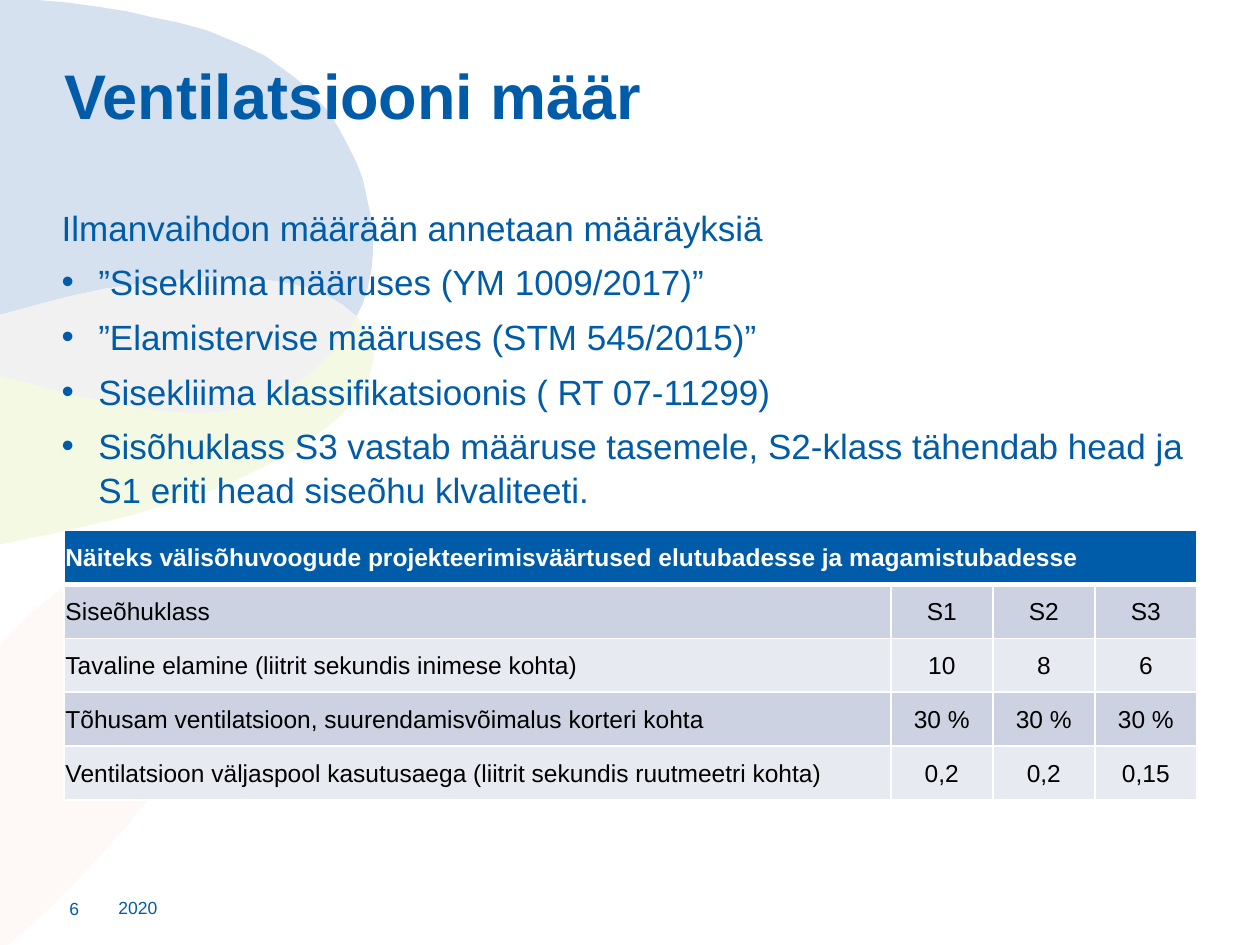
from lxml import etree
from pptx import Presentation
from pptx.dml.color import RGBColor
from pptx.enum import text
from pptx.oxml.ns import qn
from pptx.util import Inches, Pt

BLUE, WHITE, BLACK = "005CA8", "FFFFFF", "000000"
BANDS = ["CCD2E1", "E7EAF1"]

# Edges of the overlapping petals; the first two are shared by neighbours.
LENS_TOP = [
    (0, 2.5), (0.29, 2.42), (0.56, 2.35), (0.84, 2.29), (1.13, 2.25), (1.41, 2.22),
    (1.6, 2.2), (1.91, 2.2), (2.11, 2.22), (2.3, 2.25), (2.46, 2.29), (2.6, 2.35),
    (2.72, 2.42), (2.83, 2.51)]
LENS_BOTTOM = [
    (2.83, 2.51), (2.78, 2.6), (2.7, 2.72), (2.61, 2.82), (2.51, 2.92), (2.4, 3.01),
    (2.28, 3.09), (2.15, 3.15), (2.02, 3.21), (1.88, 3.25), (1.74, 3.27), (1.56, 3.28),
    (1.38, 3.27), (1.16, 3.25), (0.91, 3.2), (0.64, 3.15), (0.33, 3.07), (0, 2.98)]
BLUE_RIM = [
    (2.88, 2.41), (2.92, 2.28), (2.95, 2.13), (2.96, 2.01), (2.96, 1.83), (2.94, 1.7),
    (2.91, 1.56), (2.88, 1.42), (2.83, 1.29), (2.77, 1.17), (2.69, 1.02), (2.61, 0.89),
    (2.53, 0.8), (2.43, 0.69), (2.32, 0.6), (2.21, 0.52), (2.1, 0.44), (1.95, 0.37),
    (1.81, 0.31), (1.64, 0.24), (1.42, 0.18), (1.22, 0.14), (1.01, 0.09), (0.75, 0.05),
    (0.53, 0.02), (0.3, 0), (0, 0)]
GREEN_RIM = [
    (0, 4.32), (0.4, 4.24), (0.75, 4.16), (1.04, 4.09), (1.28, 4.02), (1.55, 3.94),
    (1.84, 3.83), (2.02, 3.74), (2.19, 3.66), (2.35, 3.57), (2.49, 3.47), (2.61, 3.38),
    (2.72, 3.28), (2.81, 3.18), (2.88, 3.08), (2.93, 2.98), (2.96, 2.88), (2.97, 2.81),
    (2.95, 2.71), (2.91, 2.62), (2.83, 2.51)]
PINK_PETAL = [
    (1.39, 4.35), (1.23, 4.36), (1.06, 4.4), (0.89, 4.45), (0.72, 4.54), (0.54, 4.64),
    (0.36, 4.77), (0.18, 4.93), (0, 5.12), (0, 7.5), (0.06, 7.5), (0.23, 7.36),
    (0.39, 7.21), (0.58, 7.02), (0.79, 6.8), (1, 6.56), (1.2, 6.32), (1.39, 6.09),
    (1.56, 5.89), (1.69, 5.71), (1.81, 5.53), (1.92, 5.35), (2, 5.16), (2.05, 5.03),
    (2.07, 4.9), (2.07, 4.79), (2.04, 4.7), (1.99, 4.59), (1.91, 4.51), (1.8, 4.44),
    (1.66, 4.39), (1.52, 4.36)]
PETALS = [
    ("FEF9F7", PINK_PETAL),
    ("F3F9E3", LENS_BOTTOM + GREEN_RIM),
    ("D6E1F0", LENS_TOP + BLUE_RIM),
    ("F1F1F1", LENS_TOP + LENS_BOTTOM),
]

INTRO = "Ilmanvaihdon määrään annetaan määräyksiä"
RULES = [
    "”Sisekliima määruses (YM 1009/2017)”",
    "”Elamistervise määruses (STM 545/2015)”",
    "Sisekliima klassifikatsioonis ( RT 07-11299)",
    "Sisõhuklass S3 vastab määruse tasemele, S2-klass tähendab head ja "
    "S1 eriti head siseõhu klvaliteeti.",
]
HEADING = "Näiteks välisõhuvoogude projekteerimisväärtused elutubadesse ja magamistubadesse"
ROWS = [
    ["Siseõhuklass", "S1", "S2", "S3"],
    ["Tavaline elamine (liitrit sekundis inimese kohta)", "10", "8", "6"],
    ["Tõhusam ventilatsioon, suurendamisvõimalus korteri kohta", "30 %", "30 %", "30 %"],
    ["Ventilatsioon väljaspool kasutusaega (liitrit sekundis ruutmeetri kohta)",
     "0,2", "0,2", "0,15"],
]


def rgb(color):
    return RGBColor.from_string(color)


def add_run(p, words, size, color=BLUE, bold=False):
    r = p.add_run()
    r.text = words
    r.font.name, r.font.size, r.font.bold = "Arial", Pt(size), bold
    r.font.color.rgb = rgb(color)


def add_petal(slide, color, points):
    builder = slide.shapes.build_freeform(*map(Inches, points[0]), scale=1.0)
    builder.add_line_segments([(Inches(x), Inches(y)) for x, y in points[1:]])
    sp = builder.convert_to_shape()
    sp.shadow.inherit = False
    sp.fill.solid()
    sp.fill.fore_color.rgb = rgb(color)
    sp.line.fill.background()


def add_frame(slide, box, anchor=text.MSO_ANCHOR.TOP):
    """Add a wrapping text box without insets and return its text frame."""
    tf = slide.shapes.add_textbox(*map(Inches, box)).text_frame
    tf.word_wrap = True
    tf.vertical_anchor = anchor
    tf.margin_left = tf.margin_top = tf.margin_right = tf.margin_bottom = 0
    return tf


def add_label(slide, box, words, size, **style):
    tf = add_frame(slide, box, style.pop("anchor", text.MSO_ANCHOR.MIDDLE))
    add_run(tf.paragraphs[0], words, size, **style)
    return tf.paragraphs[0]


def add_rules(slide):
    tf = add_frame(slide, (0.49, 1.62, 9, 2.59))
    p = tf.paragraphs[0]
    p.line_spacing = 1.05
    add_run(p, INTRO, 20)
    for rule in RULES:
        p = tf.add_paragraph()
        p.line_spacing, p.space_before = 1.05, Pt(6)
        pPr = p._p.get_or_add_pPr()
        pPr.set("marL", str(Inches(0.29)))
        pPr.set("indent", str(-Inches(0.29)))
        etree.SubElement(pPr, qn("a:buFont"), typeface="Arial")
        etree.SubElement(pPr, qn("a:buChar"), char="•")
        add_run(p, rule, 20)


def set_borders(cell, bottom=1):
    """Draw white cell borders; they must precede the fill in the XML."""
    tcPr = cell._tc.get_or_add_tcPr()
    for side, width in (("L", 1), ("R", 1), ("T", 1), ("B", bottom)):
        ln = etree.SubElement(tcPr, qn(f"a:ln{side}"), w=str(Pt(width)))
        fill = etree.SubElement(ln, qn("a:solidFill"))
        etree.SubElement(fill, qn("a:srgbClr"), val=WHITE)


def fill_cell(cell, words, fill, color=BLACK, bold=False, centred=False, bottom=1):
    set_borders(cell, bottom)
    cell.fill.solid()
    cell.fill.fore_color.rgb = rgb(fill)
    cell.vertical_anchor = text.MSO_ANCHOR.MIDDLE
    cell.margin_left = cell.margin_top = cell.margin_right = Inches(0.01)
    cell.margin_bottom = 0
    p = cell.text_frame.paragraphs[0]
    if centred:
        p.alignment = text.PP_ALIGN.CENTER
    if words:
        add_run(p, words, 14, color, bold)


def add_airflow_table(slide):
    box = (0.51, 4.21, 9, 2.14)
    table = slide.shapes.add_table(len(ROWS) + 1, 4, *map(Inches, box)).table
    for column, width in zip(table.columns, (6.56, 0.81, 0.81, 0.81)):
        column.width = Inches(width)
    for c in range(4):
        fill_cell(table.cell(0, c), "" if c else HEADING, BLUE, WHITE, True, bottom=3)
    table.cell(0, 0).merge(table.cell(0, 3))
    for i, row in enumerate(ROWS):
        for c, words in enumerate(row):
            fill_cell(table.cell(i + 1, c), words, BANDS[i % 2], centred=c > 0)


def main():
    prs = Presentation()
    prs.slide_width, prs.slide_height = Inches(10), Inches(7.5)
    slide = prs.slides.add_slide(prs.slide_layouts[6])
    for color, points in PETALS:
        add_petal(slide, color, points)
    add_label(slide, (0.94, 7.13, 0.94, 0.15), "2020", 10)
    add_label(slide, (0.55, 7.13, 0.39, 0.16), "6", 10)
    title = add_label(slide, (0.51, 0.52, 9, 0.59), "Ventilatsiooni määr", 36,
                      bold=True, anchor=text.MSO_ANCHOR.TOP)
    title.line_spacing = 0.9
    add_rules(slide)
    add_airflow_table(slide)
    prs.save("out.pptx")


if __name__ == "__main__":
    main()
